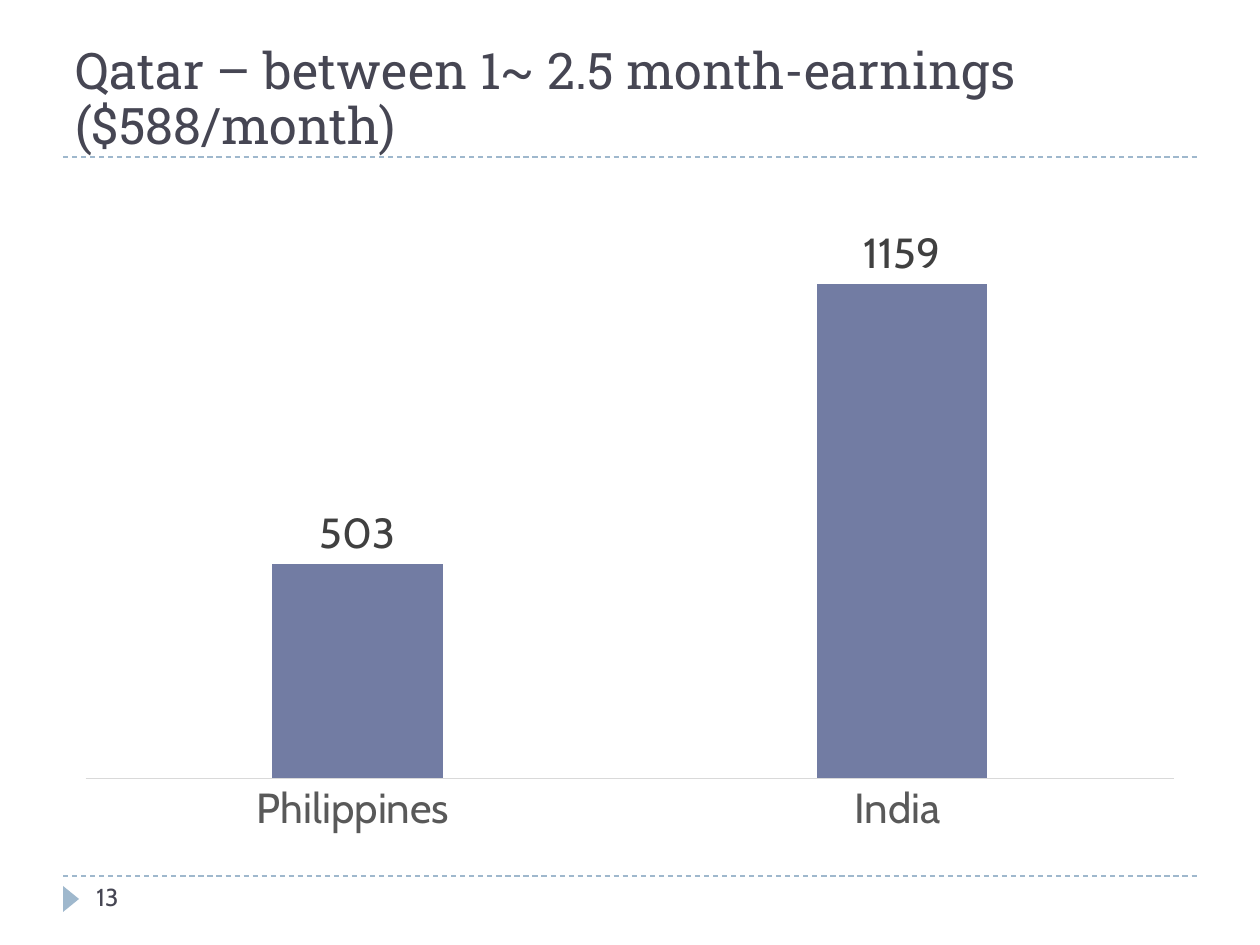
"""Build the Qatar earnings slide with its column chart."""
from dataclasses import dataclass

import lxml.etree
import pptx
import pptx.chart.data
import pptx.dml.color
import pptx.enum.chart
import pptx.enum.dml
import pptx.enum.shapes
import pptx.enum.text
import pptx.oxml.ns
import pptx.util

EMU_PER_PX = 914400 / 126
INK = pptx.dml.color.RGBColor(0x46, 0x46, 0x53)
ACCENT = pptx.dml.color.RGBColor(0x9F, 0xB8, 0xCD)
BAR = pptx.dml.color.RGBColor(0x72, 0x7C, 0xA3)
LABEL = pptx.dml.color.RGBColor(0x40, 0x40, 0x40)
CATEGORY = pptx.dml.color.RGBColor(0x59, 0x59, 0x59)
AXIS = pptx.dml.color.RGBColor(0xD9, 0xD9, 0xD9)
BODY_FONT = "Cabin"
TITLE_FONT = "Roboto Slab"


def px(n: int) -> int:
    """Turn pixels into EMU."""
    return round(n * EMU_PER_PX)


@dataclass(frozen=True)
class Box:
    """A rectangle in pixels."""
    left: int
    top: int
    width: int
    height: int

    def emu(self) -> tuple[int, int, int, int]:
        """Return the rectangle in EMU."""
        return px(self.left), px(self.top), px(self.width), px(self.height)


@dataclass(frozen=True)
class Rule:
    """A dashed horizontal rule in pixels."""
    y: int
    left: int = 63
    right: int = 1197


RULES = (Rule(876), Rule(157))
TITLE = Box(63, 21, 1134, 136)
NUMBER = Box(84, 876, 270, 50)
MARKER = Box(58, 891, 26, 16)
CHART = Box(63, 168, 1134, 680)


def set_font(font, name: str, size: float, color) -> None:
    """Set the typeface, size and colour of a font."""
    font.name = name
    font.size = pptx.util.Pt(size)
    font.color.rgb = color


def add_rule(s, rule: Rule) -> None:
    """Draw a dashed rule."""
    line = s.shapes.add_connector(
        pptx.enum.shapes.MSO_CONNECTOR.STRAIGHT,
        px(rule.left), px(rule.y), px(rule.right), px(rule.y))
    line.line.color.rgb = ACCENT
    line.line.width = pptx.util.Pt(0.75)
    line.line.dash_style = pptx.enum.dml.MSO_LINE.DASH
    lxml.etree.SubElement(line._element.spPr, pptx.oxml.ns.qn("a:effectLst"))


def add_marker(s) -> None:
    """Draw the triangle beside the slide number."""
    sp = s.shapes.add_shape(
        pptx.enum.shapes.MSO_SHAPE.ISOSCELES_TRIANGLE, *MARKER.emu())
    sp.rotation = 90
    sp.shadow.inherit = False
    sp.fill.solid()
    sp.fill.fore_color.rgb = ACCENT
    sp.line.fill.background()


def fill_title(s, text: str) -> None:
    """Place and format the title."""
    sp = s.shapes.title
    sp.left, sp.top, sp.width, sp.height = TITLE.emu()
    tf = sp.text_frame
    tf.text = text
    tf.word_wrap = True
    tf.auto_size = pptx.enum.text.MSO_AUTO_SIZE.NONE
    tf.vertical_anchor = pptx.enum.text.MSO_ANCHOR.BOTTOM
    tf.margin_bottom = px(1)
    p = tf.paragraphs[0]
    p.alignment = pptx.enum.text.PP_ALIGN.LEFT
    p.line_spacing = 0.92
    set_font(p.font, TITLE_FONT, 28.8, INK)


def add_number(s, text: str) -> None:
    """Write the slide number."""
    tf = s.shapes.add_textbox(*NUMBER.emu()).text_frame
    tf.word_wrap = True
    tf.text = text
    set_font(tf.paragraphs[0].font, BODY_FONT, 14, INK)


def add_columns(s, values: dict[str, int]) -> None:
    """Add the column chart."""
    data = pptx.chart.data.CategoryChartData()
    data.categories = list(values)
    data.add_series("Series 1", list(values.values()))
    chart = s.shapes.add_chart(
        pptx.enum.chart.XL_CHART_TYPE.COLUMN_CLUSTERED, *CHART.emu(), data).chart
    chart.has_legend = False
    chart.has_title = False
    chart.font.name = BODY_FONT
    chart.font.size = pptx.util.Pt(10)

    axis = chart.category_axis
    axis.major_tick_mark = pptx.enum.chart.XL_TICK_MARK.NONE
    axis.format.line.color.rgb = AXIS
    axis.format.line.width = pptx.util.Pt(0.75)
    set_font(axis.tick_labels.font, BODY_FONT, 24, CATEGORY)
    scale = chart.value_axis
    scale.minimum_scale, scale.maximum_scale = 0, 1400
    scale.has_major_gridlines = False
    scale.visible = False

    plot = chart.plots[0]
    plot.vary_by_categories = False
    plot.gap_width, plot.overlap = 219, -27
    series = plot.series[0]
    series.format.fill.solid()
    series.format.fill.fore_color.rgb = BAR
    labels = series.data_labels
    labels.show_value = True
    labels.position = pptx.enum.chart.XL_LABEL_POSITION.OUTSIDE_END
    set_font(labels.font, BODY_FONT, 24, LABEL)


def main() -> None:
    """Build and save the slide."""
    prs = pptx.Presentation()
    prs.slide_width, prs.slide_height = px(1260), px(945)
    s = prs.slides.add_slide(prs.slide_layouts.get_by_name("Title Only"))
    for rule in RULES:
        add_rule(s, rule)
    add_marker(s)
    fill_title(s, "Qatar – between 1~ 2.5 month-earnings ($588/month)")
    add_number(s, "13")
    add_columns(s, {"Philippines ": 503, "India ": 1159})
    prs.save("out.pptx")


if __name__ == "__main__":
    main()
